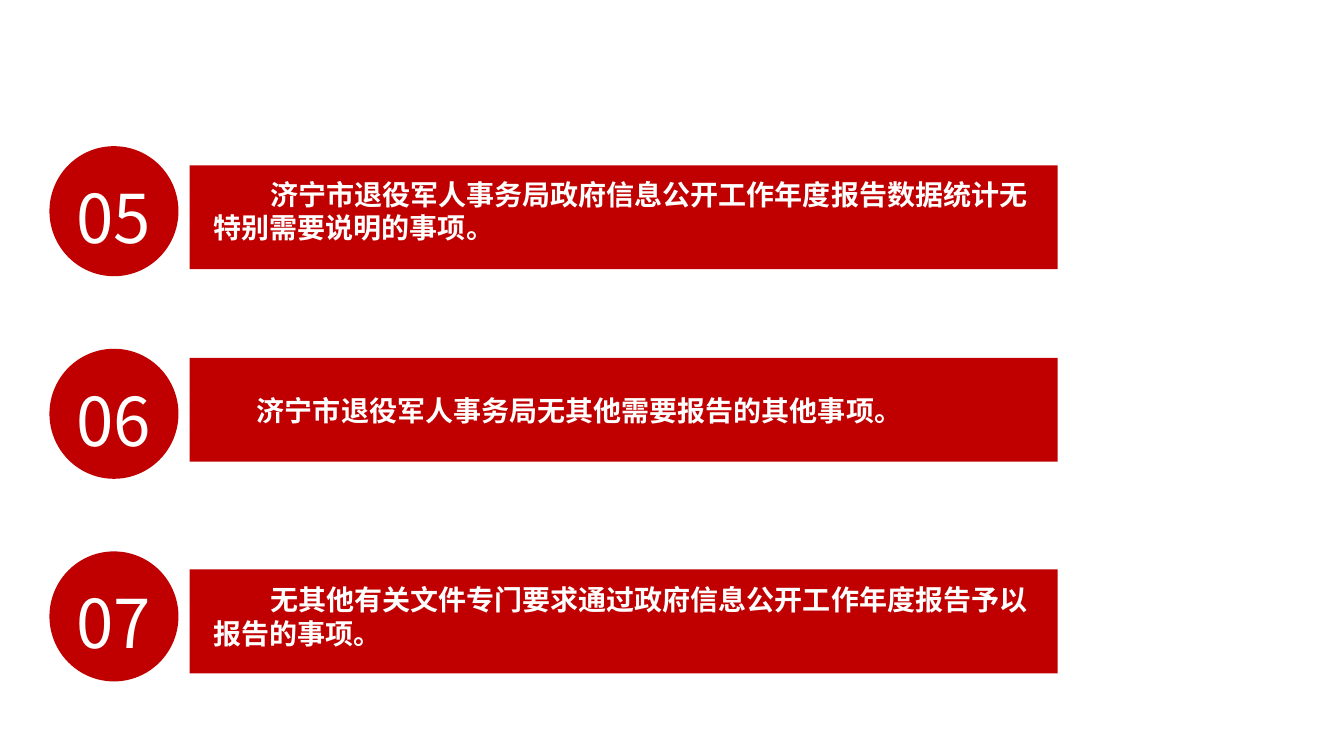
"""Build the slide of numbered report items 05 to 07."""
from lxml import etree
from pptx import Presentation
from pptx import util as u
from pptx.dml.color import RGBColor
from pptx.enum import shapes, text
from pptx.oxml import ns

PX = u.Inches(1) // 100
RED = RGBColor(0xC0, 0x00, 0x00)
WHITE = RGBColor(0xFF, 0xFF, 0xFF)
FONT = "Noto Sans CJK SC"
FIRST_CIRCLE_TOP = 145
ITEM_PITCH = 201
FIRST_LINE_INDENT = 56

ITEMS = [
    ("05", 164, (202, 171, 833, 77),
     "济宁市退役军人事务局政府信息公开工作年度报告数据统计无特别需要说明的事项。"),
    ("06", 355, (189, 385, 833, 44),
     "济宁市退役军人事务局无其他需要报告的其他事项。"),
    ("07", 565, (202, 573, 833, 77),
     "无其他有关文件专门要求通过政府信息公开工作年度报告予以报告的事项。"),
]


def to_emu(box):
    """Turn a box in px into EMU lengths."""
    return [length * PX for length in box]


def add_red_shape(group, kind, box):
    """Add a plain red shape without outline or shadow."""
    shape = group.shapes.add_shape(kind, *to_emu(box))
    shape.shadow.inherit = False
    shape.fill.solid()
    shape.fill.fore_color.rgb = RED
    shape.line.fill.background()


def add_white_text(group, box, wording, size, bold=False):
    """Add a wrapping text box with one white run and return its paragraph."""
    frame = group.shapes.add_textbox(*to_emu(box)).text_frame
    frame.word_wrap = True
    frame.auto_size = text.MSO_AUTO_SIZE.SHAPE_TO_FIT_TEXT
    paragraph = frame.paragraphs[0]
    run = paragraph.add_run()
    run.text = wording
    run.font.size = u.Pt(size)
    run.font.bold = bold
    run.font.color.rgb = WHITE
    run.font.name = FONT
    east_asian = etree.SubElement(run.font._element, ns.qn("a:ea"))
    east_asian.set("typeface", FONT)
    return paragraph


def add_item(slide, circle_top, number, bar_top, statement_box, statement):
    """Add one group of bar, circle, statement and number."""
    group = slide.shapes.add_group_shape()
    add_red_shape(group, shapes.MSO_SHAPE.RECTANGLE, (188, bar_top, 861, 103))
    add_red_shape(group, shapes.MSO_SHAPE.OVAL, (49, circle_top, 128, 129))
    paragraph = add_white_text(group, statement_box, statement, 20, bold=True)
    properties = paragraph._p.get_or_add_pPr()
    properties.set("marL", "0")
    properties.set("indent", str(FIRST_LINE_INDENT * PX))
    paragraph = add_white_text(group, (56, circle_top + 25, 113, 91), number, 48)
    paragraph.alignment = text.PP_ALIGN.CENTER


def main():
    """Create the presentation and save it."""
    presentation = Presentation()
    presentation.slide_width, presentation.slide_height = to_emu((1333, 750))
    slide = presentation.slides.add_slide(presentation.slide_layouts[6])
    for index, item in enumerate(ITEMS):
        add_item(slide, FIRST_CIRCLE_TOP + index * ITEM_PITCH, *item)
    presentation.save("out.pptx")


if __name__ == "__main__":
    main()
